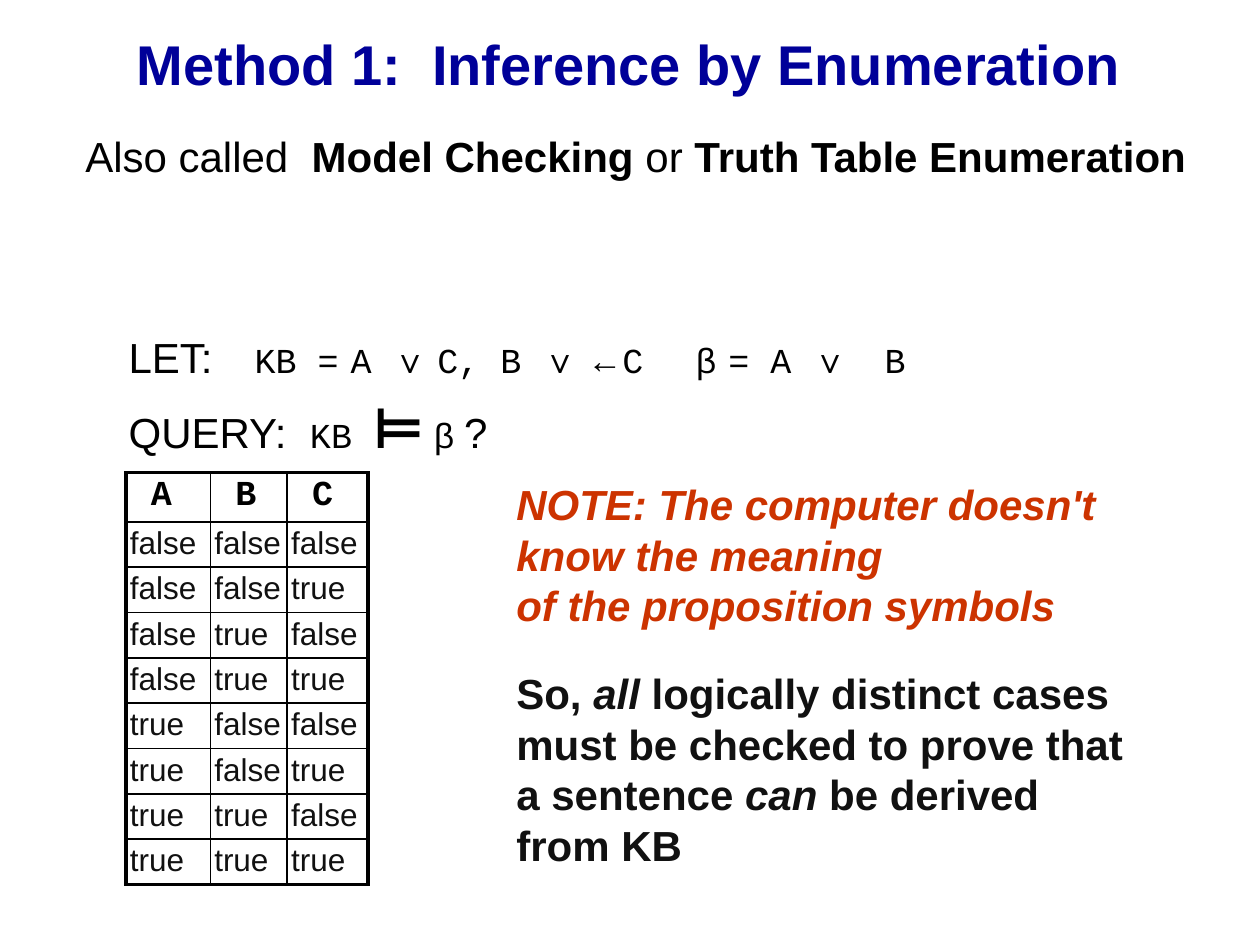
from itertools import product

from lxml import etree
from pptx import Presentation
from pptx.dml.color import RGBColor
from pptx.enum.text import MSO_ANCHOR, MSO_AUTO_SIZE, PP_ALIGN
from pptx.oxml.ns import qn
from pptx.util import Cm, Pt

CENTER = PP_ALIGN.CENTER
LEFT = PP_ALIGN.LEFT
MIDDLE = MSO_ANCHOR.MIDDLE
TOP = MSO_ANCHOR.TOP
FIXED_SIZE = MSO_AUTO_SIZE.NONE
FIT_SHAPE = MSO_AUTO_SIZE.SHAPE_TO_FIT_TEXT

COLORS = {"title": "000099", "text": "000000", "strong": "111111", "note": "CC3300"}
SANS = "Arial"
MONO = "Courier New"
THIN, THICK = Pt(1), Pt(2.25)


class SlideBuilder:
    """Holds the style and the current slide."""

    def __init__(self, presentation):
        self.slide = presentation.slides.add_slide(presentation.slide_layouts[1])

    def style(self, font, size=None, color=None, name=None, bold=None, italic=None):
        if size:
            font.size = Pt(size)
        if color:
            font.color.rgb = RGBColor.from_string(COLORS[color])
        if name:
            font.name = name
        if bold is not None:
            font.bold = bold
        if italic is not None:
            font.italic = italic

    def place(self, shape, left, top, width, height):
        shape.left, shape.top = Cm(left), Cm(top)
        shape.width, shape.height = Cm(width), Cm(height)

    def fill_paragraph(self, paragraph, runs, **look):
        """Add (text, run style) pairs; a newline becomes a line break."""
        self.style(paragraph.font, **look)
        for text, run_look in runs:
            for index, line in enumerate(text.split("\n")):
                if index:
                    paragraph.add_line_break()
                run = paragraph.add_run()
                run.text = line
                self.style(run.font, **{**look, **run_look})

    def title(self, text, box):
        shape = self.slide.shapes.title
        self.place(shape, *box)
        frame = shape.text_frame
        frame.auto_size = FIXED_SIZE
        frame.vertical_anchor = MIDDLE
        paragraph = frame.paragraphs[0]
        paragraph.alignment = CENTER
        self.fill_paragraph(paragraph, [(text, {})], size=32, color="title",
                            name=SANS, bold=True)

    def body(self, lines, box, tab_stops):
        shape = self.slide.placeholders[1]
        self.place(shape, *box)
        frame = shape.text_frame
        frame.auto_size = FIXED_SIZE
        frame.vertical_anchor = TOP
        for index, runs in enumerate(lines):
            paragraph = frame.add_paragraph() if index else frame.paragraphs[0]
            paragraph.space_before = Pt(6)
            self.fill_paragraph(paragraph, runs, size=20, color="text", name=SANS)
            self.plain_tabs(paragraph, tab_stops)

    def plain_tabs(self, paragraph, tab_stops):
        """Drop bullet and indent, and set left tab stops."""
        paragraph.alignment = LEFT
        properties = paragraph._p.get_or_add_pPr()
        properties.set("marL", "0")
        properties.set("indent", "0")
        bullet = etree.Element(qn("a:buNone"))
        tabs = etree.Element(qn("a:tabLst"))
        for stop in tab_stops:
            etree.SubElement(tabs, qn("a:tab"), pos=str(Cm(stop)), algn="l")
        default_font = properties.find(qn("a:defRPr"))
        default_font.addprevious(bullet)
        default_font.addprevious(tabs)

    def text_box(self, runs, box, wrap=True, **look):
        shape = self.slide.shapes.add_textbox(*map(Cm, box))
        frame = shape.text_frame
        frame.word_wrap = wrap
        frame.auto_size = FIT_SHAPE
        self.fill_paragraph(frame.paragraphs[0], runs, size=24, name=SANS, **look)

    def table(self, rows, box, column_widths, row_heights):
        shape = self.slide.shapes.add_table(len(rows), len(rows[0]), *map(Cm, box))
        table = shape.table
        table.first_row = table.horz_banding = False
        for column, width in zip(table.columns, column_widths):
            column.width = Cm(width)
        last_row, last_column = len(rows) - 1, len(rows[0]) - 1
        for r, values in enumerate(rows):
            table.rows[r].height = Cm(row_heights[min(r, 1)])
            for c, value in enumerate(values):
                cell = table.cell(r, c)
                cell.margin_left = cell.margin_right = Cm(0.08)
                cell.margin_top = cell.margin_bottom = Cm(0.08)
                look = (dict(size=18, color="strong", name=SANS, bold=False) if r
                        else dict(size=20, color="text", name=MONO, bold=True))
                self.fill_paragraph(cell.text_frame.paragraphs[0], [(value, {})], **look)
                cell.fill.background()
                self.borders(cell, L=c == 0, R=c == last_column, T=r == 0, B=r == last_row)

    def borders(self, cell, **outer_sides):
        """Draw all four sides, thick where the side is on the outer frame."""
        properties = cell._tc.get_or_add_tcPr()
        for index, (side, is_outer) in enumerate(outer_sides.items()):
            line = etree.Element(qn(f"a:ln{side}"), w=str(THICK if is_outer else THIN))
            fill = etree.SubElement(line, qn("a:solidFill"))
            etree.SubElement(fill, qn("a:srgbClr"), val=COLORS["text"])
            properties.insert(index, line)


def main():
    presentation = Presentation()
    presentation.slide_width, presentation.slide_height = Cm(25.4), Cm(19.05)
    builder = SlideBuilder(presentation)

    large, mono, bold, italic = {"size": 24}, {"name": MONO}, {"bold": True}, {"italic": True}
    builder.title("Method 1:  Inference by Enumeration", (1.9, 0.43, 21.56, 1.68))
    builder.body(
        [
            [("LET:\t", large), ("KB =", mono), (" ", large), ("A ", mono), ("∨ ", {}),
             ("C, B ", mono), ("∨ ←", {}), ("C\tβ", mono), (" ", large),
             ("= A ", mono), ("∨\t", {}), ("B", mono)],
            [("QUERY:  ", large), ("KB ", mono), ("⊨", {"size": 32, "bold": True}),
             (" β ", {}), ("?", large)],
        ],
        (2.34, 6.55, 22.43, 2.34),
        tab_stops=(2.88, 13.65, 17.3),
    )
    truth_rows = [(" A", " B", " C"), *product(("false", "true"), repeat=3)]
    builder.table(truth_rows, (2.54, 9.53, 4.88, 8.3),
                  column_widths=(1.7, 1.55, 1.63), row_heights=(0.99, 0.914))
    builder.text_box(
        [("NOTE: The computer doesn't know the meaning\nof the proposition symbols", {})],
        (10.16, 9.53, 12.75, 3.33), color="note", bold=True, italic=True)
    builder.text_box(
        [("So, ", {}), ("all", italic),
         (" logically distinct cases\nmust be checked to prove that\na sentence ", {}),
         ("can", italic), (" be derived from KB", {})],
        (10.16, 13.34, 12.75, 4.37), color="strong", bold=True)
    builder.text_box(
        [("Also called  ", {}), ("Model Checking", bold), (" or ", {}),
         ("Truth Table Enumeration", bold)],
        (1.47, 2.51, 22.91, 1.3), wrap=False, color="text")

    presentation.save("out.pptx")


if __name__ == "__main__":
    main()
